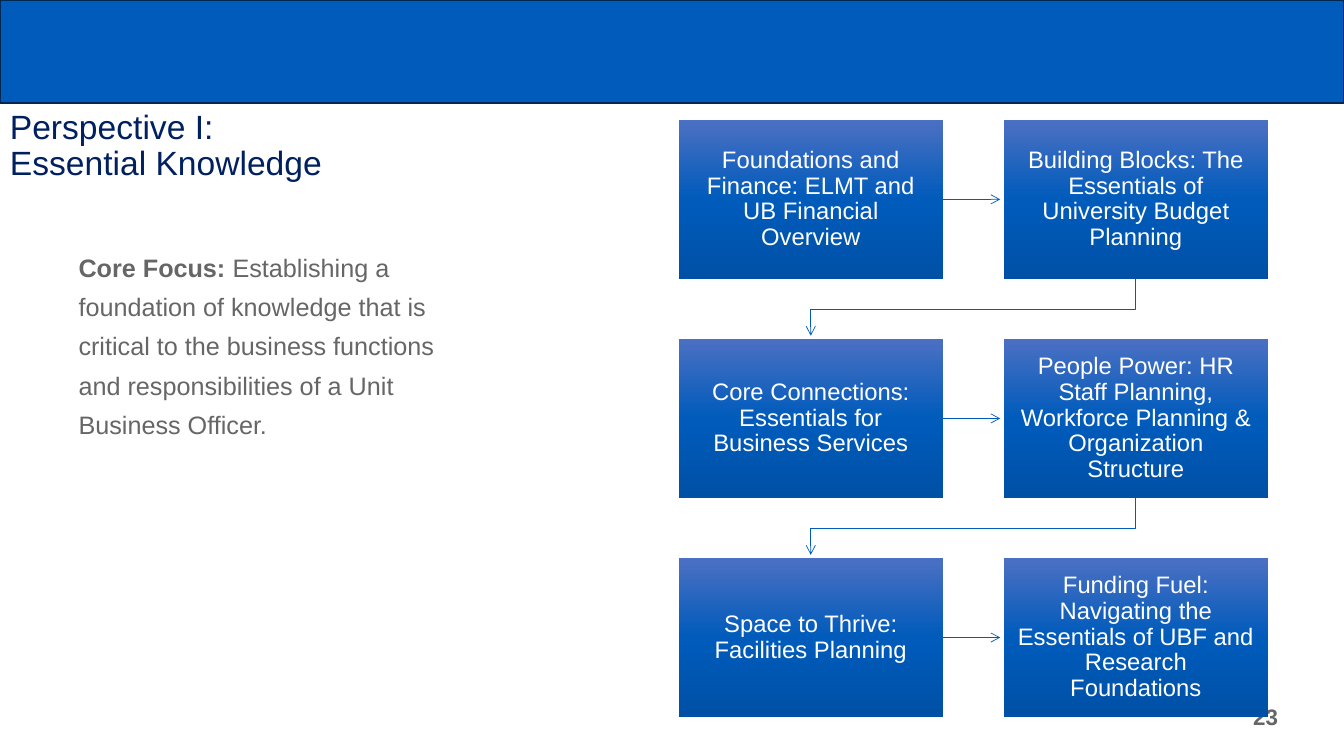
import copy

import pptx
import pptx.dml.color
import pptx.enum.shapes
import pptx.enum.text
import pptx.oxml
import pptx.oxml.ns
import pptx.util

Pt = pptx.util.Pt
ALIGN = pptx.enum.text.PP_ALIGN
ANCHOR = pptx.enum.text.MSO_ANCHOR
RECTANGLE = pptx.enum.shapes.MSO_SHAPE.RECTANGLE
COLORS = {name: pptx.dml.color.RGBColor.from_string(value) for name, value in {
    "blue": "005BBB", "band_edge": "002852", "navy": "002060", "grey": "666666",
    "white": "FFFFFF", "light_blue": "4B70C3", "deep_blue": "0051A6"}.items()}


def write(shape, text, size, color, anchor=ANCHOR.TOP, align=ALIGN.LEFT, spacing=1.0):
    """Fill a shape with one wrapped paragraph and return that paragraph."""
    frame = shape.text_frame
    frame.word_wrap = True
    frame.vertical_anchor = anchor
    frame.text = text
    paragraph = frame.paragraphs[0]
    paragraph.alignment = align
    paragraph.line_spacing = spacing
    for run in paragraph.runs:
        run.font.name = "Arial"
        run.font.size = Pt(size)
        run.font.color.rgb = COLORS[color]
    return paragraph


def style_arrow(arrow):
    """Give a connector or open outline a thin blue line ending in an open arrowhead."""
    arrow.line.color.rgb = COLORS["blue"]
    arrow.line.width = Pt(0.5)
    namespace = pptx.oxml.ns.nsdecls("a")
    arrow.line._get_or_add_ln().append(
        pptx.oxml.parse_xml(f'<a:tailEnd {namespace} type="arrow"/>'))
    if arrow.element.spPr.find(pptx.oxml.ns.qn("a:effectLst")) is None:
        arrow.element.spPr.append(pptx.oxml.parse_xml(f"<a:effectLst {namespace}/>"))


deck = pptx.Presentation()
deck.slide_width, deck.slide_height = Pt(960), Pt(540)
shapes = deck.slides.add_slide(deck.slide_layouts[6]).shapes

band = shapes.add_shape(RECTANGLE, 0, 0, Pt(960), Pt(73.5))
band.shadow.inherit = False
band.fill.solid()
band.fill.fore_color.rgb = COLORS["blue"]
band.line.color.rgb = COLORS["band_edge"]
band.line.width = Pt(1)

title = shapes.add_textbox(0, Pt(74), Pt(547), Pt(60))
write(title, "Perspective I:\vEssential Knowledge", 24, "navy", ANCHOR.BOTTOM, spacing=0.9)

focus = shapes.add_textbox(Pt(49), Pt(170), Pt(300), Pt(312))
focus_label = "Core Focus:"
focus_paragraph = write(focus, focus_label, 18, "grey", spacing=1.3)
focus_paragraph.runs[0].font.bold = True
statement = focus_paragraph.add_run()
statement.text = (" Establishing a foundation of knowledge that is critical to the business "
                  "functions and responsibilities of a Unit Business Officer.")
statement.font.name = "Arial"
statement.font.size = Pt(18)
statement.font.color.rgb = COLORS["grey"]

page_number = shapes.add_textbox(Pt(596), Pt(497.5), Pt(324), Pt(29))
write(page_number, "23", 16, "grey", ANCHOR.MIDDLE, ALIGN.RIGHT).runs[0].font.bold = True

# Course flow: two columns, read row by row
COURSES = [
    "Foundations and Finance: ELMT and UB Financial Overview",
    "Building Blocks: The Essentials of University Budget Planning",
    "Core Connections: Essentials for Business Services",
    "People Power: HR Staff Planning, Workforce Planning & Organization Structure",
    "Space to Thrive: Facilities Planning",
    "Funding Fuel: Navigating the Essentials of UBF and Research Foundations",
]
LEFT, TOP, WIDTH, HEIGHT = 484.8, 85.8, 188.7, 113.2
COLUMN_STEP, ROW_STEP = 232.2, 156.5
ARROW_GAP = 2.5
GRADIENT = [(0, "light_blue"), (0.5, "blue"), (1, "deep_blue")]

for index, course in enumerate(COURSES):
    row, column = divmod(index, 2)
    x, y = LEFT + column * COLUMN_STEP, TOP + row * ROW_STEP

    box = shapes.add_shape(RECTANGLE, Pt(x), Pt(y), Pt(WIDTH), Pt(HEIGHT))
    box.shadow.inherit = False
    box.line.fill.background()
    box.fill.gradient()
    box.fill.gradient_angle = 270
    first_stop = box.element.spPr.find(".//" + pptx.oxml.ns.qn("a:gs"))
    first_stop.addnext(copy.deepcopy(first_stop))
    for stop, (position, color) in zip(box.fill.gradient_stops, GRADIENT):
        stop.position = position
        stop.color.rgb = COLORS[color]
    frame = box.text_frame
    frame.margin_left = frame.margin_right = frame.margin_top = frame.margin_bottom = Pt(9.4)
    write(box, course, 17, "white", ANCHOR.MIDDLE, ALIGN.CENTER, 0.9)

    if column == 0:
        middle = Pt(y + HEIGHT / 2)
        arrow = shapes.add_connector(
            pptx.enum.shapes.MSO_CONNECTOR.STRAIGHT,
            Pt(x + WIDTH), middle, Pt(x + COLUMN_STEP - ARROW_GAP), middle)
        style_arrow(arrow)
    elif index < len(COURSES) - 1:
        start_x, end_x = x + WIDTH / 2, LEFT + WIDTH / 2
        bottom, next_top = y + HEIGHT, y + ROW_STEP
        turn = (bottom + next_top) / 2
        outline = shapes.build_freeform(Pt(start_x), Pt(bottom))
        outline.add_line_segments(
            [(Pt(start_x), Pt(turn)), (Pt(end_x), Pt(turn)), (Pt(end_x), Pt(next_top - ARROW_GAP))],
            close=False)
        return_arrow = outline.convert_to_shape()
        return_arrow.shadow.inherit = False
        return_arrow.fill.background()
        style_arrow(return_arrow)

deck.save("out.pptx")
